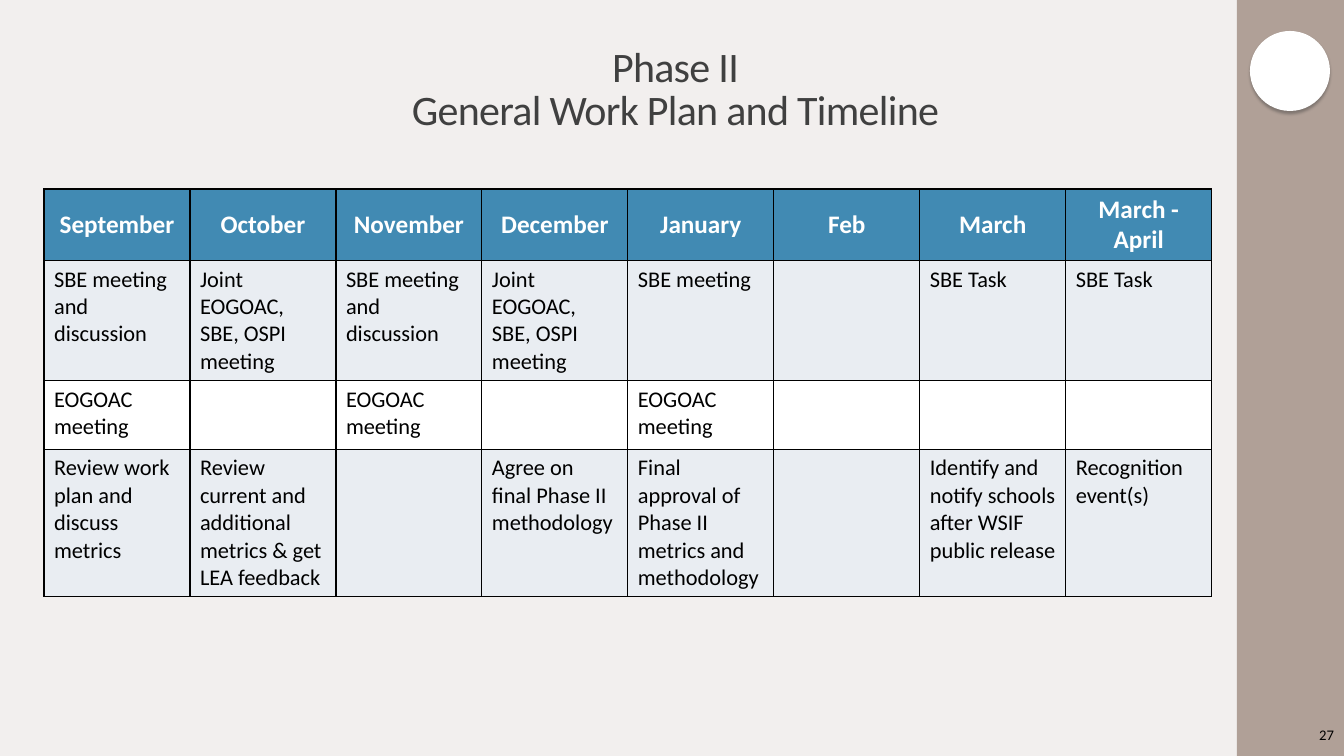
import pptx
import pptx.dml.color
import pptx.enum.shapes
import pptx.enum.text
import pptx.oxml
import pptx.oxml.ns
import pptx.util
from lxml import etree

EMU_PER_PX = 914400 / 100.8
FONT = "Calibri"
ALIGN = pptx.enum.text.PP_ALIGN
MIDDLE = pptx.enum.text.MSO_ANCHOR.MIDDLE
SHAPE = pptx.enum.shapes.MSO_SHAPE

COLUMN_WIDTH = 146
ROW_HEIGHTS = [71, 120, 69, 147]
ROW_FILLS = ["418AB3", "E9EDF2", "FFFFFF", "E9EDF2"]
WORK_PLAN = [
    ["September", "October", "November", "December",
     "January", "Feb", "March", "March - April"],
    ["SBE meeting and discussion", "Joint EOGOAC, SBE, OSPI meeting",
     "SBE meeting and discussion", "Joint EOGOAC, SBE, OSPI meeting",
     "SBE meeting", "", "SBE Task", "SBE Task"],
    ["EOGOAC meeting", "", "EOGOAC meeting", "", "EOGOAC meeting", "", "", ""],
    ["Review work plan and discuss metrics",
     "Review current and additional metrics & get LEA feedback", "",
     "Agree on final Phase II methodology",
     "Final approval of Phase II metrics and methodology", "",
     "Identify and notify schools after WSIF public release",
     "Recognition event(s)"],
]


def px(length):
    return pptx.util.Emu(round(length * EMU_PER_PX))


def color(value):
    return pptx.dml.color.RGBColor.from_string(value)


def paint(fill, value):
    fill.solid()
    fill.fore_color.rgb = color(value)


def format_text(frame, size, value, align, bold=False):
    for para in frame.paragraphs:
        para.alignment = align
        for span in para.runs:
            span.font.name = FONT
            span.font.size = pptx.util.Pt(size)
            span.font.bold = bold
            span.font.color.rgb = color(value)


def add_plain_shape(page, kind, left, top, width, height, fill):
    shape = page.shapes.add_shape(kind, px(left), px(top), px(width), px(height))
    shape.shadow.inherit = False
    paint(shape.fill, fill)
    shape.line.fill.background()
    return shape


def add_drop_shadow(shape):
    effects = shape._element.spPr.find(pptx.oxml.ns.qn("a:effectLst"))
    effects.append(pptx.oxml.parse_xml(
        f'<a:outerShdw {pptx.oxml.ns.nsdecls("a")} blurRad="25400" dist="25400" '
        'dir="5400000" rotWithShape="0"><a:srgbClr val="373737">'
        '<a:alpha val="40000"/></a:srgbClr></a:outerShdw>'))


def set_title(page, text):
    title = page.shapes.title
    title.left, title.top, title.width, title.height = map(px, (121, 31, 1109, 120))
    frame = title.text_frame
    frame.text = text
    frame.auto_size = pptx.enum.text.MSO_AUTO_SIZE.NONE
    frame.vertical_anchor = MIDDLE
    format_text(frame, 30, "404040", ALIGN.CENTER)
    for para in frame.paragraphs:
        para.line_spacing = 0.85
        for span in para.runs:
            span.font._element.set("spc", "-50")


def add_borders(cell):
    properties = cell._tc.get_or_add_tcPr()
    for index, side in enumerate(("lnL", "lnR", "lnT", "lnB")):
        line = etree.Element(pptx.oxml.ns.qn(f"a:{side}"), w="12700")
        fill = etree.SubElement(line, pptx.oxml.ns.qn("a:solidFill"))
        etree.SubElement(fill, pptx.oxml.ns.qn("a:srgbClr"), val="000000")
        properties.insert(index, line)


def add_work_plan(page, left, top):
    row_count, column_count = len(WORK_PLAN), len(WORK_PLAN[0])
    table = page.shapes.add_table(
        row_count, column_count, px(left), px(top),
        px(COLUMN_WIDTH * column_count), px(sum(ROW_HEIGHTS))).table
    for column in table.columns:
        column.width = px(COLUMN_WIDTH)
    for row_index, texts in enumerate(WORK_PLAN):
        table.rows[row_index].height = px(ROW_HEIGHTS[row_index])
        for column_index, text in enumerate(texts):
            cell = table.cell(row_index, column_index)
            cell.text_frame.text = text
            paint(cell.fill, ROW_FILLS[row_index])
            add_borders(cell)
            if row_index == 0:
                cell.vertical_anchor = MIDDLE
                format_text(cell.text_frame, 18, "FFFFFF", ALIGN.CENTER, True)
            else:
                format_text(cell.text_frame, 16, "000000", ALIGN.LEFT)


def add_page_number(page, text):
    box = page.shapes.add_textbox(px(1237), px(715), px(107), px(40))
    frame = box.text_frame
    frame.word_wrap = True
    frame.vertical_anchor = MIDDLE
    frame.text = text
    format_text(frame, 10.5, "000000", ALIGN.RIGHT)


def main():
    deck = pptx.Presentation()
    deck.slide_width, deck.slide_height = px(1344), px(756)
    page = deck.slides.add_slide(deck.slide_layouts[5])
    paint(page.background.fill, "F2EFEE")
    add_plain_shape(page, SHAPE.RECTANGLE, 1237, 0, 107, 756, "B0A097")
    badge = add_plain_shape(page, SHAPE.OVAL, 1250, 31, 80, 80, "FFFFFF")
    add_drop_shadow(badge)
    set_title(page, "Phase II\vGeneral Work Plan and Timeline")
    add_work_plan(page, 44, 189)
    add_page_number(page, "27")
    deck.save("out.pptx")


if __name__ == "__main__":
    main()
